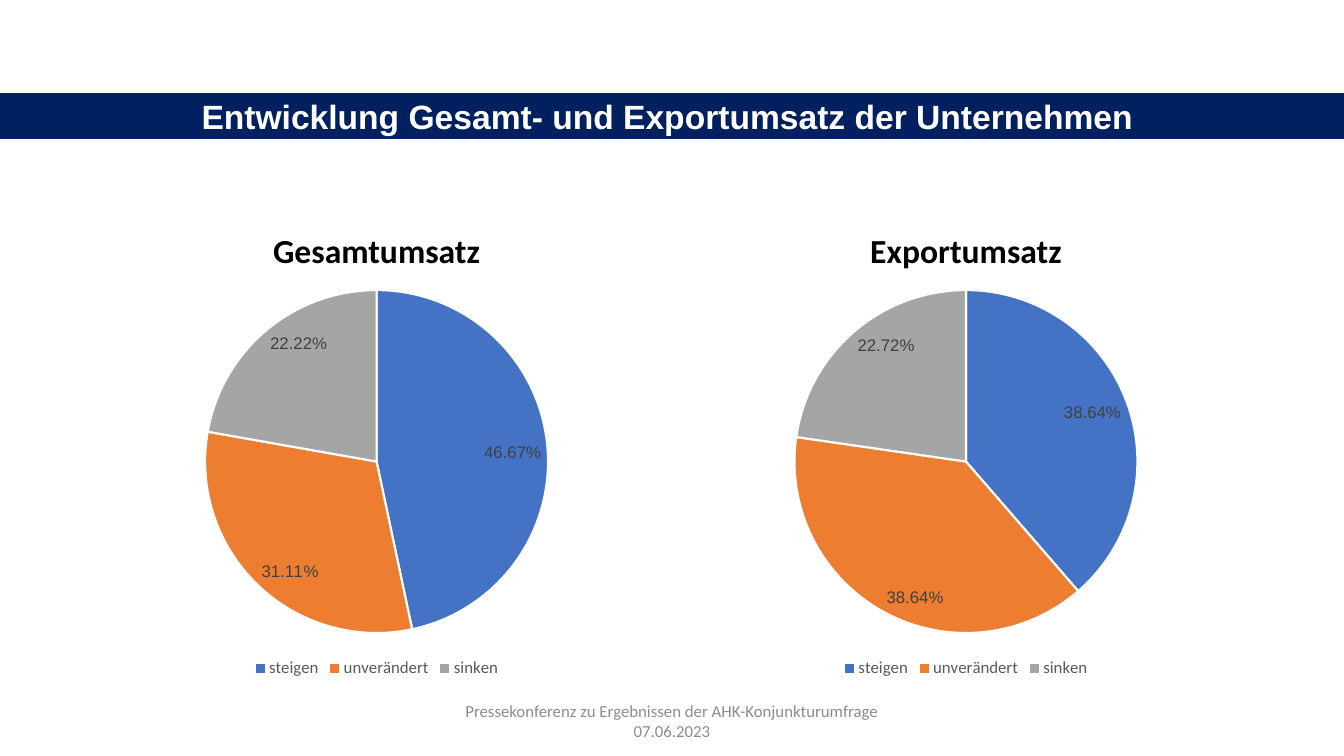
from dataclasses import dataclass

from pptx import Presentation
from pptx.chart.data import CategoryChartData
from pptx.dml.color import RGBColor
from pptx.enum import chart as charts, text
from pptx.util import Pt


@dataclass(frozen=True)
class Theme:
    navy: str = "002060"
    white: str = "FFFFFF"
    black: str = "000000"
    label: str = "404040"
    key: str = "595959"
    muted: str = "8C8C8C"
    slices: tuple = ("4472C4", "ED7D31", "A5A5A5")
    head: int = 24
    small: int = 12
    sans: str = "Arial"
    body: str = "Calibri"


class Deck:
    def __init__(self, theme):
        self.theme = theme
        self.prs = Presentation()
        self.prs.slide_width, self.prs.slide_height = Pt(960), Pt(540)
        self.slide = self.prs.slides.add_slide(self.prs.slide_layouts[5])

    def font(self, font, face, size, color, bold=False):
        font.name, font.size, font.bold = face, Pt(size), bold
        font.color.rgb = RGBColor.from_string(color)

    def fill_text(self, shape, words, anchor, *style):
        frame = shape.text_frame
        frame.text = words
        frame.word_wrap = True
        frame.auto_size = text.MSO_AUTO_SIZE.NONE
        frame.vertical_anchor = anchor
        para = frame.paragraphs[0]
        para.alignment = text.PP_ALIGN.CENTER
        for run in para.runs:
            self.font(run.font, *style)
        return para

    def title(self, words, left, top, width, height):
        t, bar = self.theme, self.slide.shapes.title
        bar.left, bar.top = Pt(left), Pt(top)
        bar.width, bar.height = Pt(width), Pt(height)
        navy = RGBColor.from_string(t.navy)
        bar.fill.solid()
        bar.fill.fore_color.rgb = navy
        bar.line.color.rgb = navy
        bar.line.width = Pt(1)
        self.fill_text(bar, words, text.MSO_ANCHOR.MIDDLE, t.sans, t.head, t.white, True)

    def label(self, words, box, anchor, *style):
        shape = self.slide.shapes.add_textbox(*map(Pt, box))
        return self.fill_text(shape, words, anchor, *style)

    def pie(self, names, values, box):
        t = self.theme
        data = CategoryChartData(number_format='0.00"%"')
        data.categories = names
        data.add_series("Series 1", values)
        frame = self.slide.shapes.add_chart(charts.XL_CHART_TYPE.PIE, *map(Pt, box), data)
        chart = frame.chart
        self.font(chart.font, t.body, 10, t.black)
        chart.has_title = False

        # Legend
        chart.has_legend = True
        chart.legend.position = charts.XL_LEGEND_POSITION.BOTTOM
        chart.legend.include_in_layout = False
        self.font(chart.legend.font, t.body, t.small, t.key)

        # Slices
        plot = chart.plots[0]
        plot.vary_by_categories = True
        for i, color in enumerate(t.slices):
            look = plot.series[0].points[i].format
            look.fill.solid()
            look.fill.fore_color.rgb = RGBColor.from_string(color)
            look.line.color.rgb = RGBColor.from_string(t.white)
            look.line.width = Pt(1.5)

        # Value labels
        tags = plot.series[0].data_labels
        tags.show_value = True
        tags.show_percentage = False
        tags.number_format = '0.00"%"'
        tags.number_format_is_linked = False
        tags.position = charts.XL_LABEL_POSITION.INSIDE_END
        self.font(tags.font, t.sans, t.small, t.label)


def main():
    theme = Theme()
    deck = Deck(theme)

    # Title bar
    deck.title("Entwicklung Gesamt- und Exportumsatz der Unternehmen ", 0, 67, 960, 31.7)

    # Two pies with headings
    names = ("steigen", "unverändert", "sinken")
    panels = (
        ("Gesamtumsatz", 66, 406, (46.67, 31.11, 22.22)),
        ("Exportumsatz", 486, 408, (38.64, 38.64, 22.72)),
    )
    for head, left, width, values in panels:
        para = deck.label(head, (left, 132.5, width, 64.8), text.MSO_ANCHOR.BOTTOM,
                          theme.body, theme.head, theme.black, True)
        para.line_spacing = 0.9
        deck.pie(names, values, (left, 197.3, width, 290))

    # Footer
    deck.label("Pressekonferenz zu Ergebnissen der AHK-Konjunkturumfrage\v07.06.2023",
               (318, 500.5, 324, 28.8), text.MSO_ANCHOR.MIDDLE,
               theme.body, theme.small, theme.muted)

    deck.prs.save("out.pptx")


if __name__ == "__main__":
    main()
